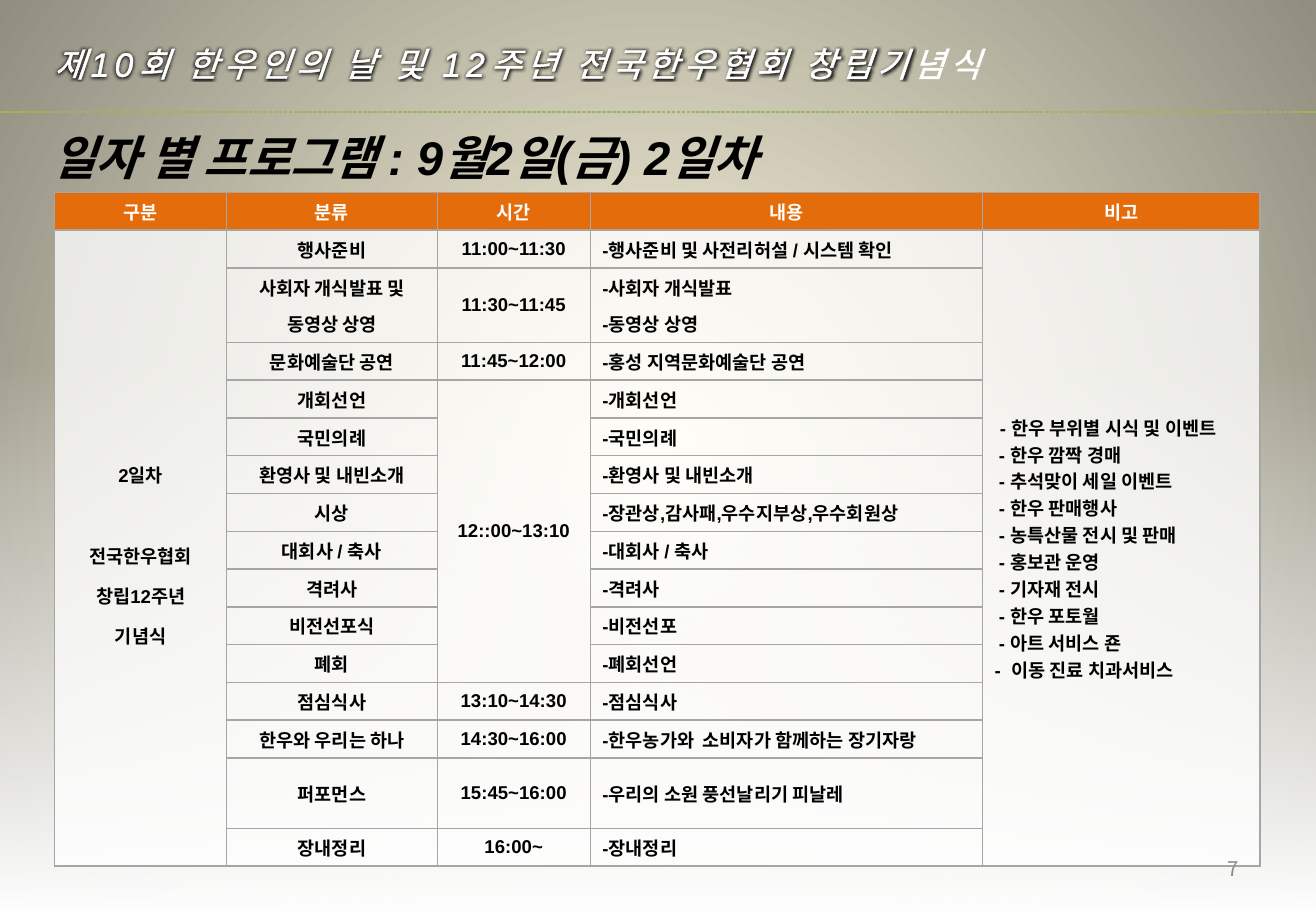
from lxml import etree
from pptx import Presentation
from pptx.dml.color import RGBColor
from pptx.enum.dml import MSO_LINE_DASH_STYLE as DASH
from pptx.enum.shapes import MSO_CONNECTOR, MSO_SHAPE
from pptx.enum.text import MSO_ANCHOR as ANCHOR, PP_ALIGN as ALIGN
from pptx.oxml.ns import qn
from pptx.util import Cm, Pt

WIDTH, HEIGHT = 27.51, 19.05
LATIN, KOREAN = "Arial", "Noto Sans CJK KR"
COLORS = {
    "cream": "FCF7DD", "stone": "918E81", "white": "FFFFFF", "black": "000000",
    "orange": "E46C0A", "border": "A6A6A6", "rule": "98B955", "number": "8C8C8C",
}
COLUMNS = [3.6, 4.4, 3.2, 8.2, 5.8]
ROW_HEIGHT, TALL_ROWS = 0.79, {2: 1.56, 14: 1.47}
HEADINGS = ["구분", "분류", "시간", "내용", "비고"]
DAY = "2일차\n전국한우협회\n창립12주년\n기념식"
EVENTS = [
    " - 한우 부위별 시식 및 이벤트", " - 한우 깜짝 경매", " - 추석맞이 세일 이벤트",
    " - 한우 판매행사", " - 농특산물 전시 및 판매", " - 홍보관 운영",
    " - 기자재 전시", " - 한우 포토월", " - 아트 서비스 죤",
]
NOTES = "\v".join(EVENTS) + "\n-  이동 진료 치과서비스"
PROGRAM = [
    ("행사준비", "11:00~11:30", "-행사준비 및 사전리허설 / 시스템 확인"),
    ("사회자 개식발표 및\n동영상 상영", "11:30~11:45", "-사회자 개식발표\n-동영상 상영"),
    ("문화예술단 공연", "11:45~12:00", "-홍성 지역문화예술단 공연"),
    ("개회선언", "12::00~13:10", "-개회선언"),
    ("국민의례", "", "-국민의례"),
    ("환영사 및 내빈소개", "", "-환영사 및 내빈소개"),
    ("시상", "", "-장관상,감사패,우수지부상,우수회원상"),
    ("대회사 / 축사", "", "-대회사 / 축사"),
    ("격려사", "", "-격려사"),
    ("비전선포식", "", "-비전선포"),
    ("폐회", "", "-폐회선언"),
    ("점심식사", "13:10~14:30", "-점심식사"),
    ("한우와 우리는 하나", "14:30~16:00", "-한우농가와  소비자가 함께하는 장기자랑"),
    ("퍼포먼스", "15:45~16:00", "-우리의 소원 풍선날리기 피날레"),
    ("장내정리", "16:00~", "-장내정리"),
]


def rgb(name):
    return RGBColor.from_string(COLORS[name])


def add_child(parent, tag, **attributes):
    return etree.SubElement(parent, qn(tag), attributes)


def add_solid(parent, color):
    return add_child(add_child(parent, "a:solidFill"), "a:srgbClr", val=COLORS[color])


def format_run(run, size, color, font=LATIN, bold=False, italic=False):
    run.font.size, run.font.name = Pt(size), font
    run.font.bold, run.font.italic = bold, italic
    run.font.color.rgb = rgb(color)
    add_child(run.font._element, "a:ea", typeface=KOREAN)


def set_gradient(fill, start, end):
    fill.gradient()
    for stop, color in zip(fill.gradient_stops, (start, end)):
        stop.color.rgb = rgb(color)


def add_text(slide, box, text, size, color, **style):
    shape = slide.shapes.add_textbox(*map(Cm, box))
    shape.text_frame.word_wrap = True
    shape.text_frame.text = text
    paragraph = shape.text_frame.paragraphs[0]
    format_run(paragraph.runs[0], size, color, **style)
    return shape.text_frame, paragraph


def draw_background(slide):
    set_gradient(slide.background.fill, "cream", "stone")
    gradient = next(slide._element.iter(qn("a:gradFill")))
    gradient.remove(gradient.find(qn("a:lin")))
    path = add_child(gradient, "a:path", path="circle")
    add_child(path, "a:fillToRect", l="50000", t="50000", r="50000", b="50000")


def draw_fade(slide, box):
    shape = slide.shapes.add_shape(MSO_SHAPE.RECTANGLE, *map(Cm, box))
    shape.shadow.inherit = False
    shape.line.fill.background()
    set_gradient(shape.fill, "white", "white")
    shape.fill.gradient_angle = 90
    last_color = list(shape._element.iter(qn("a:srgbClr")))[-1]
    add_child(last_color, "a:alpha", val="0")


def draw_rule(slide, top):
    line = slide.shapes.add_connector(MSO_CONNECTOR.STRAIGHT, 0, Cm(top), Cm(WIDTH), Cm(top))
    line.line.color.rgb = rgb("rule")
    line.line.width = Pt(0.75)
    line.line.dash_style = DASH.SQUARE_DOT
    add_child(line._element.spPr, "a:effectLst")


def draw_event_title(slide, box):
    text = "제10회 한우인의 날 및 12주년 전국한우협회 창립기념식"
    frame, paragraph = add_text(slide, box, text, 20, "white", italic=True)
    frame.margin_left, frame.margin_top = Cm(0.66), Cm(0.6)
    properties = paragraph.runs[0].font._element
    properties.set("spc", "300")
    outline = etree.Element(qn("a:ln"), w="18415")
    add_solid(outline, "white")
    properties.insert(0, outline)
    effects = etree.Element(qn("a:effectLst"))
    glow = add_child(effects, "a:glow", rad="63500")
    add_child(glow, "a:srgbClr", val=COLORS["black"])
    properties.insert(2, effects)


def draw_program_title(slide, box):
    text = "일자 별 프로그램 : 9월2일(금) 2일차"
    _, paragraph = add_text(slide, box, text, 28, "black", bold=True, italic=True)
    paragraph.line_spacing = 1.3


def style_cell(cell, is_header):
    cell.vertical_anchor = ANCHOR.MIDDLE
    cell.margin_top = cell.margin_bottom = Cm(0.11)
    cell.fill.solid()
    cell.fill.fore_color.rgb = rgb("orange" if is_header else "white")
    properties = cell._tc.get_or_add_tcPr()
    if not is_header:
        add_child(next(properties.iter(qn("a:srgbClr"))), "a:alpha", val="76000")
    for position, side in enumerate("LRTB"):
        border = etree.Element(qn(f"a:ln{side}"), w="12700")
        add_solid(border, "border")
        properties.insert(position, border)


def fill_cell(cell, text, color, align, gap=0.0, spacing=None):
    cell.text_frame.text = text
    for index, paragraph in enumerate(cell.text_frame.paragraphs):
        paragraph.alignment = align
        if spacing:
            paragraph.line_spacing = spacing
        if index and gap:
            paragraph.space_before = Pt(gap)
        for run in paragraph.runs:
            format_run(run, 11, color, bold=True)


def draw_program_table(slide, left, top):
    heights = [TALL_ROWS.get(row, ROW_HEIGHT) for row in range(len(PROGRAM) + 1)]
    size = len(heights), len(COLUMNS)
    box = left, top, sum(COLUMNS), sum(heights)
    table = slide.shapes.add_table(*size, *map(Cm, box)).table
    for column, width in zip(table.columns, COLUMNS):
        column.width = Cm(width)
    for row, height in zip(table.rows, heights):
        row.height = Cm(height)
    for row in range(size[0]):
        for column in range(size[1]):
            style_cell(table.cell(row, column), row == 0)
    for first, last, column in ((1, 15, 0), (1, 15, 4), (4, 11, 2)):
        table.cell(first, column).merge(table.cell(last, column))
    for column, heading in enumerate(HEADINGS):
        fill_cell(table.cell(0, column), heading, "white", ALIGN.CENTER)
    for row, entries in enumerate(PROGRAM, 1):
        for column, text in enumerate(entries, 1):
            align = ALIGN.LEFT if column == 3 else ALIGN.CENTER
            if text:
                fill_cell(table.cell(row, column), text, "black", align, gap=5.5)
    day_cell = table.cell(1, 0)
    fill_cell(day_cell, DAY, "black", ALIGN.CENTER, spacing=1.5)
    day_cell.text_frame.paragraphs[1].space_before = Pt(24)
    fill_cell(table.cell(1, 4), NOTES, "black", ALIGN.LEFT)


def draw_page_number(slide, box):
    frame, paragraph = add_text(slide, box, "7", 12, "number", font=KOREAN)
    frame.vertical_anchor = ANCHOR.MIDDLE
    paragraph.alignment = ALIGN.RIGHT


def main():
    presentation = Presentation()
    presentation.slide_width, presentation.slide_height = Cm(WIDTH), Cm(HEIGHT)
    slide = presentation.slides.add_slide(presentation.slide_layouts[6])
    draw_background(slide)
    draw_fade(slide, (0, 7.52, WIDTH, HEIGHT - 7.52))
    draw_rule(slide, 2.34)
    draw_program_title(slide, (0.84, 2.21, 18.11, 1.65))
    draw_program_table(slide, 1.14, 4.02)
    draw_page_number(slide, (19.71, 17.65, 6.43, 1.02))
    draw_event_title(slide, (0.48, 0.3, 24.08, 1.8))
    presentation.save("out.pptx")


if __name__ == "__main__":
    main()
